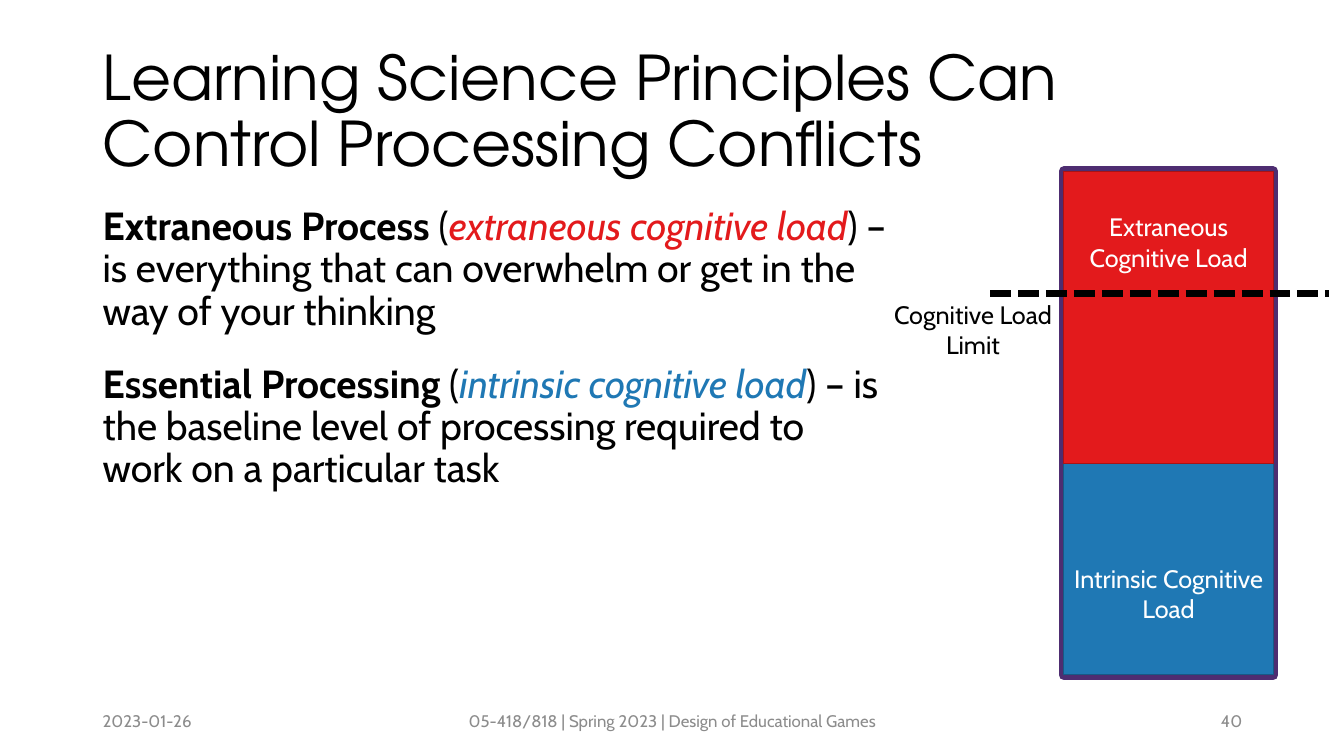
from dataclasses import dataclass

from lxml import etree
from pptx import Presentation
from pptx.dml.color import RGBColor
from pptx.enum.dml import MSO_LINE
from pptx.enum.shapes import MSO_CONNECTOR, MSO_SHAPE
from pptx.enum.text import MSO_ANCHOR, PP_ALIGN
from pptx.oxml.ns import qn
from pptx.util import Inches, Pt

LEFT, CENTER, RIGHT = PP_ALIGN.LEFT, PP_ALIGN.CENTER, PP_ALIGN.RIGHT
TOP, MIDDLE, BOTTOM = MSO_ANCHOR.TOP, MSO_ANCHOR.MIDDLE, MSO_ANCHOR.BOTTOM
RECTANGLE, STRAIGHT = MSO_SHAPE.RECTANGLE, MSO_CONNECTOR.STRAIGHT
SQUARE_DASH = MSO_LINE.SQUARE_DOT


@dataclass(frozen=True)
class Theme:
    title_font: str = "TeX Gyre Adventor"
    body_font: str = "Cabin"
    title_size: int = 44
    body_size: int = 28
    label_size: int = 18
    footer_size: int = 12
    black: str = "000000"
    white: str = "FFFFFF"
    grey: str = "8C8C8C"
    red: str = "E31A1C"
    dark_red: str = "A81315"
    blue: str = "1F78B4"
    dark_blue: str = "175985"
    purple: str = "6A3D99"
    dark_purple: str = "4E2D71"


THEME = Theme()

DEFINITIONS = [
    ("Extraneous Process ", "(", "extraneous cognitive load", THEME.red,
     ") – is everything that can overwhelm or get in the way of your thinking"),
    ("Essential Processing", " (", "intrinsic cognitive load", THEME.blue,
     ") – is the baseline level of processing required to work on a particular task"),
]


def style_run(r, size, color, font=THEME.body_font, bold=False, italic=False):
    r.font.name = font
    r.font.size = Pt(size)
    r.font.bold = bold
    r.font.italic = italic
    r.font.color.rgb = RGBColor.from_string(color)


def add_box(slide, box, anchor=TOP):
    tf = slide.shapes.add_textbox(*map(Inches, box)).text_frame
    tf.word_wrap = True
    tf.vertical_anchor = anchor
    return tf


def set_text(tf, text, size, color, align=LEFT, font=THEME.body_font):
    tf.text = text
    p = tf.paragraphs[0]
    p.alignment = align
    style_run(p.runs[0], size, color, font)
    return p


def add_title(slide, box, text):
    tf = add_box(slide, box, MIDDLE)
    p = set_text(tf, text, THEME.title_size, THEME.black, font=THEME.title_font)
    p.line_spacing = 0.9


def add_definitions(slide, box, definitions):
    tf = add_box(slide, box)
    for i, (term, opening, load, color, meaning) in enumerate(definitions):
        p = tf.add_paragraph() if i else tf.paragraphs[0]
        p.line_spacing = 0.9
        p.space_before = Pt(22 if i else 0)
        for text, run_color, bold, italic in (
            (term, THEME.black, True, False),
            (opening, THEME.black, False, False),
            (load, color, False, True),
            (meaning, THEME.black, False, False),
        ):
            r = p.add_run()
            r.text = text
            style_run(r, THEME.body_size, run_color, bold=bold, italic=italic)


def add_footer(slide, box, date, course, number):
    x, y, w, h = box
    side, middle = 3, 4.5
    for left, width, text, align in (
        (x, side, date, LEFT),
        (x + (w - middle) / 2, middle, course, CENTER),
        (x + w - side, side, number, RIGHT),
    ):
        tf = add_box(slide, (left, y, width, h), MIDDLE)
        set_text(tf, text, THEME.footer_size, THEME.grey, align)


def add_bar(slide, box, fill, line, width):
    sp = slide.shapes.add_shape(RECTANGLE, *map(Inches, box))
    sp.shadow.inherit = False
    sp.fill.solid()
    sp.fill.fore_color.rgb = RGBColor.from_string(fill)
    sp.line.color.rgb = RGBColor.from_string(line)
    sp.line.width = Pt(width)
    return sp


def add_load_bar(slide, box, fill, line, text, anchor, top=0.05, bottom=0.05):
    tf = add_bar(slide, box, fill, line, 1).text_frame
    tf.word_wrap = True
    tf.vertical_anchor = anchor
    tf.margin_top, tf.margin_bottom = Inches(top), Inches(bottom)
    set_text(tf, text, THEME.label_size, THEME.white, CENTER)


def add_limit(slide, x1, x2, y):
    line = slide.shapes.add_connector(
        STRAIGHT, Inches(x1), Inches(y), Inches(x2), Inches(y))
    line.line.color.rgb = RGBColor.from_string(THEME.black)
    line.line.width = Pt(5)
    line.line.dash_style = SQUARE_DASH
    etree.SubElement(line._element.spPr, qn("a:effectLst"))


def add_load_diagram(slide, box):
    x, y, w, h = box
    intrinsic, extraneous = 2.82, 2.9
    limit = y + 1.21
    add_bar(slide, box, THEME.purple, THEME.dark_purple, 7)
    add_load_bar(slide, (x, y + h - intrinsic - 0.01, w, intrinsic), THEME.blue,
                 THEME.dark_blue, "Intrinsic Cognitive Load", BOTTOM, bottom=0.5)
    add_load_bar(slide, (x, y, w, extraneous), THEME.red,
                 THEME.dark_red, "Extraneous Cognitive Load", TOP, top=0.4)
    add_limit(slide, x - 0.73, x + w + 0.55, limit)
    tf = add_box(slide, (x - 1.89, limit + 0.01, 1.98, 0.71))
    set_text(tf, "Cognitive Load Limit", THEME.label_size, THEME.black, CENTER)


def main():
    prs = Presentation()
    prs.slide_width, prs.slide_height = Inches(13.33), Inches(7.5)
    slide = prs.slides.add_slide(prs.slide_layouts[6])
    add_title(slide, (0.92, 0.4, 11.5, 1.45),
              "Learning Science Principles Can Control Processing Conflicts")
    add_definitions(slide, (0.92, 2, 8, 4.76), DEFINITIONS)
    add_footer(slide, (0.92, 6.95, 11.5, 0.4), "2023-01-26",
               "05-418/818 | Spring 2023 | Design of Educational Games", "40")
    add_load_diagram(slide, (10.55, 1.7, 2.08, 5))
    prs.save("out.pptx")


if __name__ == "__main__":
    main()
